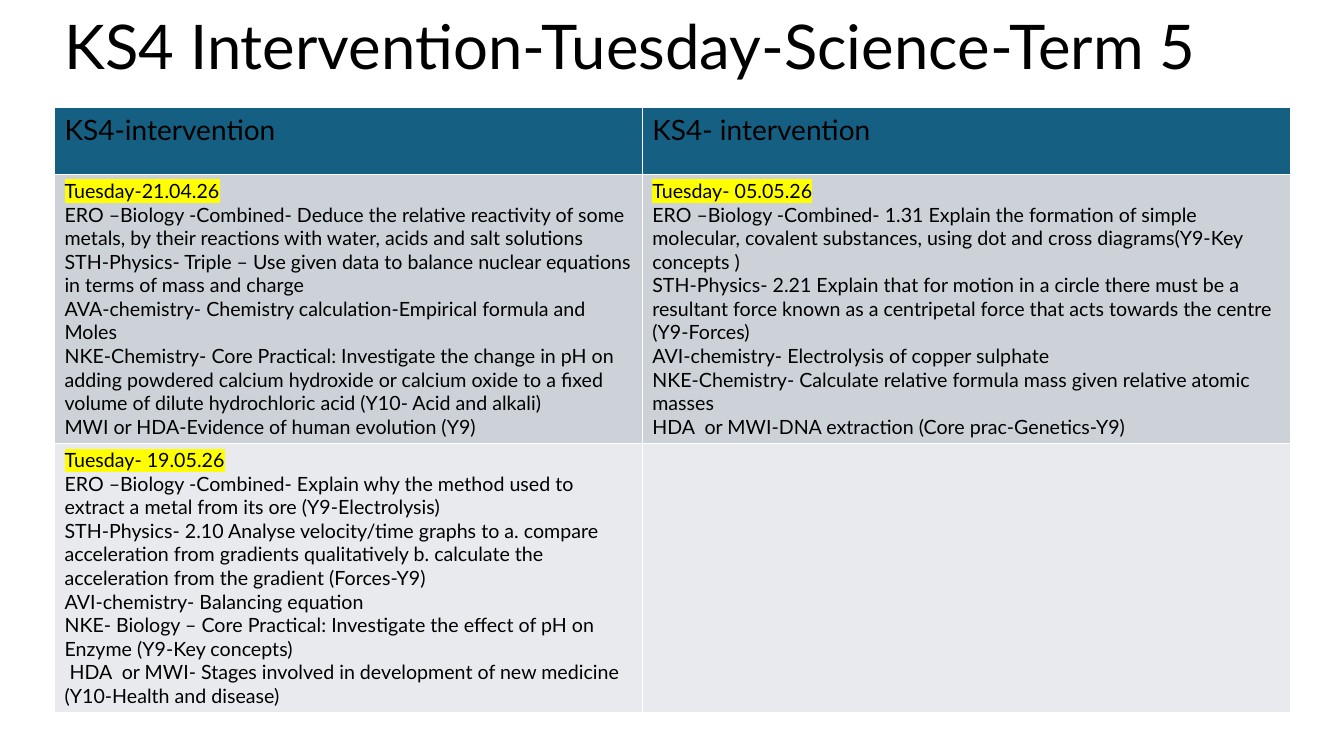
from dataclasses import dataclass

from lxml.etree import SubElement
from pptx import Presentation
from pptx.dml.color import RGBColor as RGB
from pptx.enum.text import MSO_ANCHOR as ANCHOR, MSO_AUTO_SIZE as AUTO, PP_ALIGN as ALIGN
from pptx.oxml.ns import qn
from pptx.util import Inches, Pt


@dataclass(frozen=True)
class Theme:
    font: str = "Lato"
    ink: str = "000000"
    highlight: str = "FFFF00"
    row_fills: tuple = ("156082", "CCD2D8", "E8EAED")
    title_size: int = 44
    header_size: int = 20
    body_size: int = 14


THEME = Theme()
COL_WIDTHS = (5.83, 6.43)
ROW_HEIGHTS = (0.66, 2.67, 2.67)

TITLE = "KS4 Intervention-Tuesday-Science-Term 5"
HEADERS = ("KS4-intervention", "KS4- intervention")

# Each session: the date, then one line per teacher
SESSIONS = (
    (
        (
            "Tuesday-21.04.26",
            "ERO –Biology -Combined- Deduce the relative reactivity of some metals, "
            "by their reactions with water, acids and salt solutions",
            "STH-Physics- Triple – Use given data to balance nuclear equations "
            "in terms of mass and charge",
            "AVA-chemistry- Chemistry calculation-Empirical formula and Moles",
            "NKE-Chemistry- Core Practical: Investigate the change in pH on adding "
            "powdered calcium hydroxide or calcium oxide to a fixed volume of dilute "
            "hydrochloric acid (Y10- Acid and alkali)",
            "MWI or HDA-Evidence of human evolution (Y9)",
        ),
        (
            "Tuesday- 05.05.26",
            "ERO –Biology -Combined- 1.31 Explain the formation of simple molecular, "
            "covalent substances, using dot and cross diagrams(Y9-Key concepts )",
            "STH-Physics- 2.21 Explain that for motion in a circle there must be a "
            "resultant force known as a centripetal force that acts towards the centre "
            "(Y9-Forces)",
            "AVI-chemistry- Electrolysis of copper sulphate",
            "NKE-Chemistry- Calculate relative formula mass given relative atomic masses",
            "HDA  or MWI-DNA extraction (Core prac-Genetics-Y9)",
        ),
    ),
    (
        (
            "Tuesday- 19.05.26",
            "ERO –Biology -Combined- Explain why the method used to extract a metal "
            "from its ore (Y9-Electrolysis)",
            "STH-Physics- 2.10 Analyse velocity/time graphs to a. compare acceleration "
            "from gradients qualitatively b. calculate the acceleration from the "
            "gradient (Forces-Y9)",
            "AVI-chemistry- Balancing equation",
            "NKE- Biology – Core Practical: Investigate the effect of pH on Enzyme "
            "(Y9-Key concepts)",
            " HDA  or MWI- Stages involved in development of new medicine "
            "(Y10-Health and disease)",
        ),
        (),
    ),
)


def add_run(p, text, size):
    r = p.add_run()
    r.text = text
    font_format = {"size": Pt(size), "name": THEME.font, "bold": False}
    for name, value in font_format.items():
        setattr(r.font, name, value)
    r.font.color.rgb = RGB.from_string(THEME.ink)
    return r


def highlight(r):
    # The highlight must follow the text fill
    rPr = r.font.fill._xPr
    mark = SubElement(rPr, qn("a:highlight"))
    SubElement(mark, qn("a:srgbClr"), val=THEME.highlight)
    rPr.find(qn("a:solidFill")).addnext(mark)


def format_title(sp):
    box = {"left": 0.54, "top": 0.02, "width": 11.5, "height": 0.95}
    for name, value in box.items():
        setattr(sp, name, Inches(value))
    tf = sp.text_frame
    frame_format = {"vertical_anchor": ANCHOR.MIDDLE, "word_wrap": True,
                    "auto_size": AUTO.NONE}
    for name, value in frame_format.items():
        setattr(tf, name, value)
    p = tf.paragraphs[0]
    p.alignment = ALIGN.LEFT
    p.line_spacing = 0.9
    add_run(p, TITLE, THEME.title_size)


def fill_cell(cell, lines, size, fill, dated):
    cell.fill.solid()
    cell.fill.fore_color.rgb = RGB.from_string(fill)
    tf = cell.text_frame
    for i, line in enumerate(lines):
        p = tf.add_paragraph() if i else tf.paragraphs[0]
        r = add_run(p, line, size)
        if dated and i == 0:
            highlight(r)


def add_schedule(s):
    rows = [[(header,) for header in HEADERS], *SESSIONS]
    table = s.shapes.add_table(
        len(rows), len(COL_WIDTHS), Inches(0.54), Inches(1.07),
        Inches(sum(COL_WIDTHS)), Inches(sum(ROW_HEIGHTS))).table
    for column, width in zip(table.columns, COL_WIDTHS):
        column.width = Inches(width)
    for i, (row, height) in enumerate(zip(table.rows, ROW_HEIGHTS)):
        row.height = Inches(height)
        size = THEME.body_size if i else THEME.header_size
        for cell, lines in zip(row.cells, rows[i]):
            fill_cell(cell, lines, size, THEME.row_fills[i], dated=i > 0)


def main():
    prs = Presentation()
    prs.slide_width, prs.slide_height = Inches(13.33), Inches(7.5)
    s = prs.slides.add_slide(prs.slide_layouts[5])

    # Title
    format_title(s.shapes.title)

    # Intervention sessions
    add_schedule(s)

    prs.save("out.pptx")


if __name__ == "__main__":
    main()
